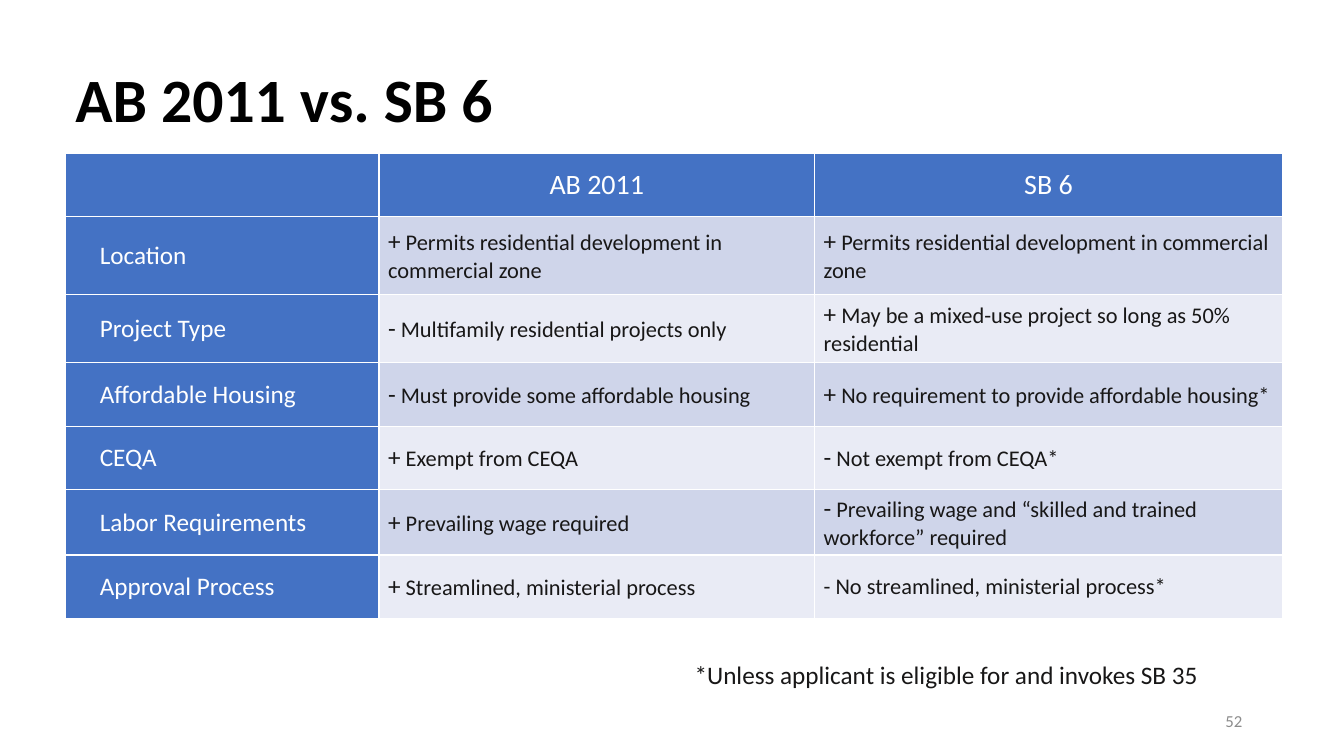
from pptx import Presentation
from pptx.dml.color import RGBColor
from pptx.enum.text import MSO_ANCHOR, PP_ALIGN
from pptx.util import Inches, Pt

LEFT, CENTER, RIGHT = PP_ALIGN.LEFT, PP_ALIGN.CENTER, PP_ALIGN.RIGHT
TOP, MIDDLE = MSO_ANCHOR.TOP, MSO_ANCHOR.MIDDLE
FONT = "Calibri"
BLUE, WHITE, INK = "4472C4", "FFFFFF", "181717"
BANDS = ["CFD5EA", "E9EBF5"]
COLUMN_WIDTHS = [3.11, 4.32, 4.64]
ROW_HEIGHTS = [0.63, 0.77, 0.68, 0.63, 0.63, 0.63, 0.63]
HEADERS = ["", "AB 2011", "SB 6"]
COMPARISON = [
    ("Location", "+ Permits residential development in commercial zone",
     "+ Permits residential development in commercial zone"),
    ("Project Type", "- Multifamily residential projects only",
     "+ May be a mixed-use project so long as 50% residential"),
    ("Affordable Housing", "- Must provide some affordable housing",
     "+ No requirement to provide affordable housing*"),
    ("CEQA", "+ Exempt from CEQA", "- Not exempt from CEQA*"),
    ("Labor Requirements", "+ Prevailing wage required",
     "- Prevailing wage and “skilled and trained workforce” required"),
    ("Approval Process", "+ Streamlined, ministerial process",
     "- No streamlined, ministerial process*"),
]
SMALL_SIGN_CELL = (6, 2)


def rgb(value):
    return RGBColor.from_string(value)


def add_run(p, text, size, color, bold=False):
    r = p.add_run()
    r.text = text
    formats = {"name": FONT, "size": Pt(size), "bold": bold}
    for name, value in formats.items():
        setattr(r.font, name, value)
    r.font.color.rgb = rgb(color)


def add_text(s, box, text, size, color, align=LEFT, anchor=TOP, bold=False):
    tf = s.shapes.add_textbox(*map(Inches, box)).text_frame
    tf.word_wrap = True
    tf.vertical_anchor = anchor
    p = tf.paragraphs[0]
    p.alignment = align
    add_run(p, text, size, color, bold)
    return p


def fill_cell(cell, runs, fill, color, align=LEFT, indent=0):
    cell.fill.solid()
    cell.fill.fore_color.rgb = rgb(fill)
    cell.vertical_anchor = MIDDLE
    margins = {"left": 0.09 + indent, "right": 0.09, "top": 0.04, "bottom": 0.04}
    for side, value in margins.items():
        setattr(cell, "margin_" + side, Inches(value))
    p = cell.text_frame.paragraphs[0]
    p.alignment = align
    for text, size in runs:
        add_run(p, text, size, color)


def add_comparison(s, box):
    table = s.shapes.add_table(len(ROW_HEIGHTS), len(COLUMN_WIDTHS),
                               *map(Inches, box)).table
    table.first_col = True
    for column, width in zip(table.columns, COLUMN_WIDTHS):
        column.width = Inches(width)
    for row, height in zip(table.rows, ROW_HEIGHTS):
        row.height = Inches(height)
    for j, header in enumerate(HEADERS):
        runs = [(header, 20)] if header else []
        fill_cell(table.cell(0, j), runs, BLUE, WHITE, CENTER)
    for i, (topic, *bills) in enumerate(COMPARISON, 1):
        fill_cell(table.cell(i, 0), [(topic, 18)], BLUE, WHITE, indent=0.25)
        for j, text in enumerate(bills, 1):
            sign_size = 16 if (i, j) == SMALL_SIGN_CELL else 18
            runs = [(text[0], sign_size), (text[1:], 16)]
            fill_cell(table.cell(i, j), runs, BANDS[(i - 1) % 2], INK)


def add_comparison_slide(prs):
    s = prs.slides.add_slide(prs.slide_layouts[6])
    title = add_text(s, (0.65, 0.29, 12.28, 1.45), "AB 2011 vs. SB 6", 44,
                     "000000", anchor=MIDDLE, bold=True)
    title.line_spacing = 0.9
    add_comparison(s, (0.65, 1.52, sum(COLUMN_WIDTHS), sum(ROW_HEIGHTS)))
    add_text(s, (6.79, 6.49, 6.05, 0.4),
             "*Unless applicant is eligible for and invokes SB 35", 18, INK)
    add_text(s, (9.42, 6.95, 3, 0.4), "52", 12, "8C8C8C", RIGHT, MIDDLE)


def main():
    prs = Presentation()
    prs.slide_width, prs.slide_height = Inches(13.33), Inches(7.5)
    add_comparison_slide(prs)
    prs.save("out.pptx")


if __name__ == "__main__":
    main()
